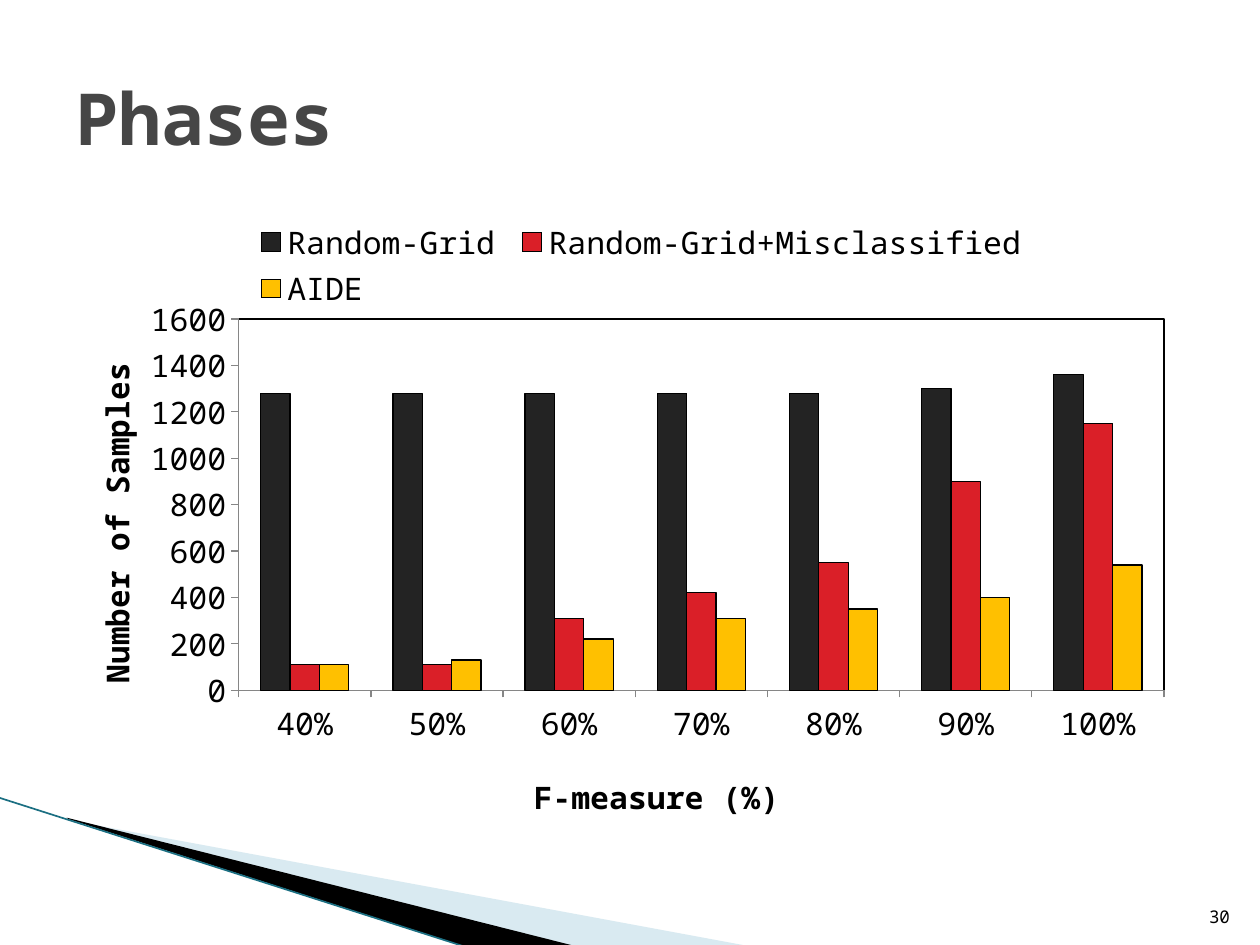
"""Build the Phases slide: a clustered column chart over a swoosh corner."""
from lxml.etree import SubElement
from pptx import Presentation
from pptx.chart.data import CategoryChartData
from pptx.dml.color import RGBColor
from pptx.enum.chart import XL_CHART_TYPE as ChartType, XL_LEGEND_POSITION as LegendPosition
from pptx.enum.chart import XL_TICK_MARK as TickMark
from pptx.enum.shapes import MSO_CONNECTOR as Connector
from pptx.enum.text import MSO_ANCHOR as Anchor, PP_ALIGN as Align
from pptx.oxml import parse_xml
from pptx.oxml.ns import nsdecls, qn
from pptx.util import Inches, Pt

FONT = "Noto Sans Mono"
BLACK = RGBColor(0x00, 0x00, 0x00)
GREY = RGBColor(0x46, 0x46, 0x46)
AXIS_GREY = RGBColor(0x86, 0x86, 0x86)
PALE_BLUE = RGBColor(0xA0, 0xCB, 0xDC)
TEAL = RGBColor(0x1B, 0x6F, 0x82)
CHARCOAL = RGBColor(0x23, 0x23, 0x23)
RED = RGBColor(0xDA, 0x1F, 0x28)
AMBER = RGBColor(0xFF, 0xC0, 0x00)

WIDTH, HEIGHT = 10, 7.5
MARGIN = 0.05 * WIDTH
CONTENT_WIDTH = WIDTH - 2 * MARGIN
CATEGORIES = (0.4, 0.5, 0.6, 0.7, 0.8, 0.9, 1.0)
SERIES = (
    ("Random-Grid", CHARCOAL, (1280, 1280, 1280, 1280, 1280, 1300, 1360)),
    ("Random-Grid+Misclassified", RED, (110, 110, 310, 420, 550, 900, 1150)),
    ("AIDE", AMBER, (110, 130, 220, 310, 350, 400, 540)),
)
SWOOSHES = (
    (PALE_BLUE, 40, ((0.55, 6.51), (5.95, 7.51), (4.56, 7.51), (0.55, 6.5))),
    (BLACK, 100, ((0.53, 6.49), (4.57, 7.51), (3.72, 7.52), (0.54, 6.5))),
)
EDGE_LINE = (-0.01, 6.33, 3.71, 7.52)
PLOT_LAYOUT = {"x": 0.155, "y": 0.188, "w": 0.816, "h": 0.607}
LEGEND_LAYOUT = {"x": 0.16, "y": 0.02, "w": 0.7, "h": 0.16}
CATEGORY_TITLE_LAYOUT = {"x": 0.41, "y": 0.92}
VALUE_TITLE_LAYOUT = {"x": 0.02, "y": 0.26}


def style_font(font, size, color=BLACK, bold=False):
    font.name, font.size, font.bold = FONT, Pt(size), bold
    font.color.rgb = color


def add_text(slide, text, box, size, color=BLACK, bold=False, align=Align.LEFT, anchor=Anchor.MIDDLE):
    shape = slide.shapes.add_textbox(*map(Inches, box))
    frame = shape.text_frame
    frame.word_wrap, frame.vertical_anchor = True, anchor
    paragraph = frame.paragraphs[0]
    paragraph.alignment = align
    run = paragraph.add_run()
    run.text = text
    style_font(run.font, size, color, bold)


def add_swoosh(slide, color, opacity, points):
    builder = slide.shapes.build_freeform(*map(Inches, points[0]), scale=1.0)
    builder.add_line_segments([tuple(map(Inches, point)) for point in points[1:]], close=True)
    shape = builder.convert_to_shape()
    shape.shadow.inherit = False
    shape.fill.solid()
    shape.fill.fore_color.rgb = color
    shape.line.fill.background()
    if opacity < 100:
        color_element = shape.fill._xPr.find(".//" + qn("a:srgbClr"))
        SubElement(color_element, qn("a:alpha")).set("val", str(opacity * 1000))


def add_edge_line(slide):
    connector = slide.shapes.add_connector(Connector.STRAIGHT, *map(Inches, EDGE_LINE))
    connector.line.color.rgb = TEAL
    connector.line.width = Pt(0.95)
    SubElement(connector._element.spPr, qn("a:effectLst"))


def set_layout(element, index, shares, inner=False):
    for old in element.findall(qn("c:layout")):
        element.remove(old)
    target = '<c:layoutTarget val="inner"/>' if inner else ""
    modes = "".join(f'<c:{key}Mode val="edge"/>' for key in shares if key in "xy")
    sizes = "".join(f'<c:{key} val="{share}"/>' for key, share in shares.items())
    element.insert(index, parse_xml(
        f'<c:layout {nsdecls("c")}><c:manualLayout>{target}{modes}{sizes}</c:manualLayout></c:layout>'))


def style_axis(axis, title, layout):
    axis.has_major_gridlines = False
    axis.major_tick_mark, axis.minor_tick_mark = TickMark.OUTSIDE, TickMark.NONE
    axis.format.line.color.rgb = AXIS_GREY
    style_font(axis.tick_labels.font, 18)
    frame = axis.axis_title.text_frame
    frame.text = title
    style_font(frame.paragraphs[0].runs[0].font, 18, bold=True)
    set_layout(axis.axis_title._element, 1, layout)


def add_samples_chart(slide):
    data = CategoryChartData(number_format="General")
    data.categories = CATEGORIES
    data.categories.number_format = "0%"
    for name, _, values in SERIES:
        data.add_series(name, values)
    box = (MARGIN, 1.62, CONTENT_WIDTH, 4.95)
    chart = slide.shapes.add_chart(ChartType.COLUMN_CLUSTERED, *map(Inches, box), data).chart
    style_font(chart.font, 18)
    chart.has_title = False
    chart.has_legend = True
    chart.legend.position = LegendPosition.TOP
    chart.legend.include_in_layout = False
    style_font(chart.legend.font, 18)
    set_layout(chart.legend._element, 1, LEGEND_LAYOUT)

    plot = chart.plots[0]
    plot.gap_width, plot.overlap, plot.vary_by_categories = 150, 0, False
    for series, (_, color, _) in zip(plot.series, SERIES):
        series.format.fill.solid()
        series.format.fill.fore_color.rgb = color
        series.format.line.color.rgb = BLACK
        series.format.line.width = Pt(0.75)

    style_axis(chart.category_axis, "F-measure (%)", CATEGORY_TITLE_LAYOUT)
    style_axis(chart.value_axis, "Number of Samples", VALUE_TITLE_LAYOUT)
    chart.category_axis.tick_labels.number_format = "0%"
    chart.category_axis.tick_labels.number_format_is_linked = False
    chart.value_axis.minimum_scale, chart.value_axis.maximum_scale = 0, 1600
    chart.value_axis.major_unit = 200

    plot_area = chart._chartSpace.chart.plotArea
    set_layout(plot_area, 0, PLOT_LAYOUT, inner=True)
    plot_area.append(parse_xml(
        f'<c:spPr {nsdecls("c", "a")}><a:noFill/><a:ln w="9525"><a:solidFill>'
        f'<a:srgbClr val="{BLACK}"/></a:solidFill></a:ln></c:spPr>'))


def main():
    presentation = Presentation()
    presentation.slide_width, presentation.slide_height = Inches(WIDTH), Inches(HEIGHT)
    slide = presentation.slides.add_slide(presentation.slide_layouts[6])
    for swoosh in SWOOSHES:
        add_swoosh(slide, *swoosh)
    add_edge_line(slide)
    add_text(slide, "Phases", (MARGIN, 0.3, CONTENT_WIDTH, 1.25), 41, color=GREY, bold=True)
    add_samples_chart(slide)
    add_text(slide, "30", (9.46, 7.01, 0.4, 0.4), 10, align=Align.RIGHT, anchor=Anchor.BOTTOM)
    presentation.save("out.pptx")


if __name__ == "__main__":
    main()
